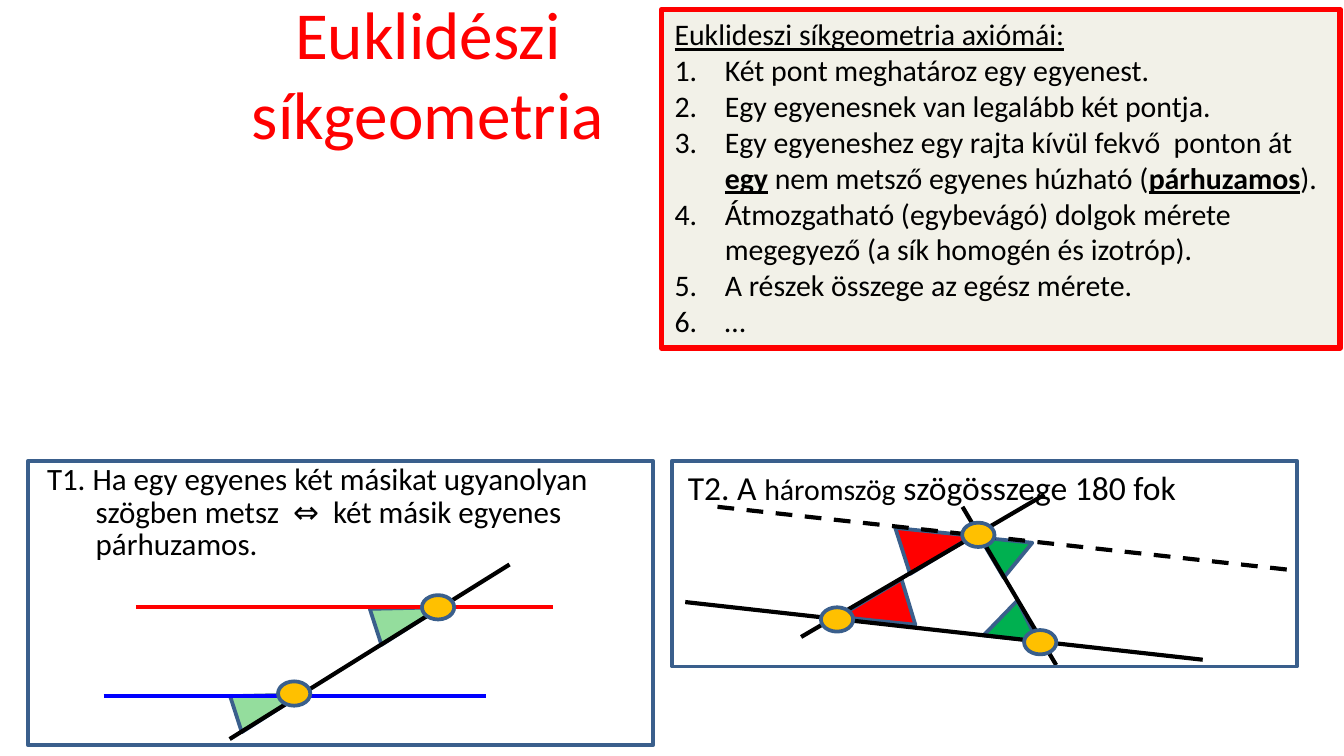
from lxml.etree import SubElement
from pptx import Presentation
from pptx.dml.color import RGBColor
from pptx.enum.dml import MSO_LINE
from pptx.enum.shapes import MSO_CONNECTOR, MSO_SHAPE
from pptx.enum.text import MSO_ANCHOR, PP_ALIGN
from pptx.oxml.ns import qn
from pptx.util import Cm, Pt

BLACK = RGBColor(0x00, 0x00, 0x00)
RED = RGBColor(0xFF, 0x00, 0x00)
BLUE = RGBColor(0x00, 0x00, 0xFF)
GREEN = RGBColor(0x00, 0xB0, 0x50)
LIGHT_GREEN = RGBColor(0x01, 0xAF, 0x16)
ORANGE = RGBColor(0xFF, 0xC0, 0x00)
CREAM = RGBColor(0xF2, 0xF1, 0xE8)
OUTLINE = RGBColor(0x3A, 0x5F, 0x8C)

FONT = "Calibri"
DOT_WIDTH, DOT_HEIGHT = 0.61, 0.46
STRONG = {"bold": True, "underline": True}

AXIOMS = [
    [("Két pont meghatároz egy egyenest.", {})],
    [("Egy egyenesnek van legalább két pontja.", {})],
    [("Egy egyeneshez egy rajta kívül fekvő  ponton át ", {}), ("egy", STRONG),
     (" nem metsző egyenes húzható (", {}), ("párhuzamos", STRONG), (").", {})],
    [("Átmozgatható (egybevágó) dolgok mérete megegyező "
      "(a sík homogén és izotróp).", {})],
    [("A részek összege az egész mérete.", {})],
    [("…", {})],
]


def add_span(para, text, size=16, color=BLACK, bold=False, underline=False):
    span = para.add_run()
    span.text = text
    font = span.font
    font.name, font.size, font.bold, font.underline = FONT, Pt(size), bold, underline
    font.color.rgb = color


def next_para(frame):
    """Return the empty first paragraph, or a new one after it."""
    first = frame.paragraphs[0]
    return frame.add_paragraph() if first.runs else first


def add_text_box(page, left, top, width, height):
    box = page.shapes.add_textbox(Cm(left), Cm(top), Cm(width), Cm(height))
    box.text_frame.word_wrap = True
    return box.text_frame


def style_shape(shape, fill=None, line=OUTLINE, weight=2):
    shape.shadow.inherit = False
    if fill is None:
        shape.fill.background()
    else:
        shape.fill.solid()
        shape.fill.fore_color.rgb = fill
    shape.line.color.rgb = line
    shape.line.width = Pt(weight)


def add_box(page, left, top, width, height, kind=MSO_SHAPE.RECTANGLE, **style):
    box = page.shapes.add_shape(kind, Cm(left), Cm(top), Cm(width), Cm(height))
    style_shape(box, **style)
    return box


def add_dot(page, x, y):
    add_box(page, x - DOT_WIDTH / 2, y - DOT_HEIGHT / 2, DOT_WIDTH, DOT_HEIGHT,
            kind=MSO_SHAPE.OVAL, fill=ORANGE)


def add_angle(page, corners, fill, opacity=None):
    points = [(Cm(x), Cm(y)) for x, y in corners]
    builder = page.shapes.build_freeform(*points[0], scale=1.0)
    builder.add_line_segments(points[1:], close=True)
    angle = builder.convert_to_shape()
    style_shape(angle, fill=fill)
    if opacity is not None:
        color = angle.fill._xPr.find(qn("a:solidFill"))[0]
        SubElement(color, qn("a:alpha"), val=str(opacity * 1000))


def add_line(page, x1, y1, x2, y2, color=BLACK, dashed=False):
    line = page.shapes.add_connector(MSO_CONNECTOR.STRAIGHT,
                                     Cm(x1), Cm(y1), Cm(x2), Cm(y2))
    line.line.color.rgb = color
    line.line.width = Pt(2.25)
    if dashed:
        line.line.dash_style = MSO_LINE.DASH
    SubElement(line._element.spPr, qn("a:effectLst"))


def number_para(para):
    props = para._p.get_or_add_pPr()
    props.set("marL", str(Cm(0.95)))
    props.set("indent", str(-Cm(0.95)))
    SubElement(props, qn("a:buFont"), typeface="+mj-lt")
    SubElement(props, qn("a:buAutoNum"), type="arabicPeriod")


def add_title(page):
    frame = add_text_box(page, 3.71, 0.18, 8.76, 2.39)
    frame.vertical_anchor = MSO_ANCHOR.MIDDLE
    para = next_para(frame)
    para.alignment = PP_ALIGN.CENTER
    add_span(para, "Euklidészi síkgeometria", size=36, color=RED)


def add_axioms(page):
    box = add_box(page, 12.5, 0.18, 12.83, 6.4, fill=CREAM, line=RED, weight=3)
    frame = box.text_frame
    frame.word_wrap = True
    frame.vertical_anchor = MSO_ANCHOR.TOP
    heading = next_para(frame)
    add_span(heading, "Euklideszi síkgeometria axiómái:", underline=True)
    for axiom in AXIOMS:
        para = next_para(frame)
        number_para(para)
        for text, style in axiom:
            add_span(para, text, **style)
    for para in frame.paragraphs:
        para.alignment = PP_ALIGN.LEFT


def add_parallel_theorem(page):
    # Equal angles: the lower one is the upper one shifted along the transversal
    upper = [(8.33, 11.48), (7.21, 12.19), (6.99, 11.51)]
    for dx, dy in ((0, 0), (-2.64, 1.65)):
        add_angle(page, [(x + dx, y + dy) for x, y in upper], LIGHT_GREEN, opacity=42)

    add_line(page, 2.57, 11.48, 10.46, 11.48, color=RED)
    add_line(page, 1.96, 13.16, 9.19, 13.16, color=BLUE)
    add_line(page, 4.34, 13.97, 9.63, 10.67)
    add_dot(page, 5.56, 13.11)
    add_dot(page, 8.28, 11.48)

    # Frame and wording
    add_box(page, 0.53, 8.71, 11.81, 5.38)
    frame = add_text_box(page, 0.64, 8.76, 12.45, 2.06)
    for text, indent in (("T1. Ha egy egyenes két másikat ugyanolyan", 0),
                         ("szögben metsz  ⇔  két másik egyenes", 0.92),
                         ("párhuzamos.", 0.92)):
        para = next_para(frame)
        para.line_spacing = 0.7
        para.space_before = Pt(3.3)
        para._p.get_or_add_pPr().set("marL", str(Cm(indent)))
        add_span(para, text, size=16.6)


def add_triangle_theorem(page):
    # Pairs of alternate angles
    for corners, fill in (
        ([(15.85, 11.66), (17.04, 10.95), (17.3, 11.81)], RED),
        ([(18.39, 10.13), (17.2, 10.85), (16.92, 9.98)], RED),
        ([(18.59, 12.01), (19.23, 11.35), (19.61, 12.12)], GREEN),
        ([(19.51, 10.26), (18.97, 10.92), (18.52, 10.16)], GREEN),
    ):
        add_angle(page, corners, fill)

    # Wording
    para = next_para(add_text_box(page, 12.75, 8.79, 11.25, 0.94))
    para.line_spacing = 0.9
    add_span(para, "T2. A ", size=18)
    add_span(para, "háromszög")
    add_span(para, " szögösszege 180 fok", size=18)

    # Sides, the parallel through the apex, and the vertices
    add_line(page, 12.95, 11.38, 22.73, 12.47)
    add_line(page, 15.14, 12.04, 19.74, 9.35)
    add_line(page, 18.19, 9.58, 19.96, 12.57)
    add_line(page, 13.56, 9.58, 24.36, 10.77, dashed=True)
    for x, y in ((15.82, 11.71), (19.66, 12.14), (18.49, 10.11)):
        add_dot(page, x, y)
    add_box(page, 12.7, 8.71, 11.81, 3.89)


def main():
    deck = Presentation()
    deck.slide_width, deck.slide_height = Cm(25.4), Cm(14.29)
    page = deck.slides.add_slide(deck.slide_layouts[6])
    add_axioms(page)
    add_title(page)
    add_triangle_theorem(page)
    add_parallel_theorem(page)
    deck.save("out.pptx")


if __name__ == "__main__":
    main()
